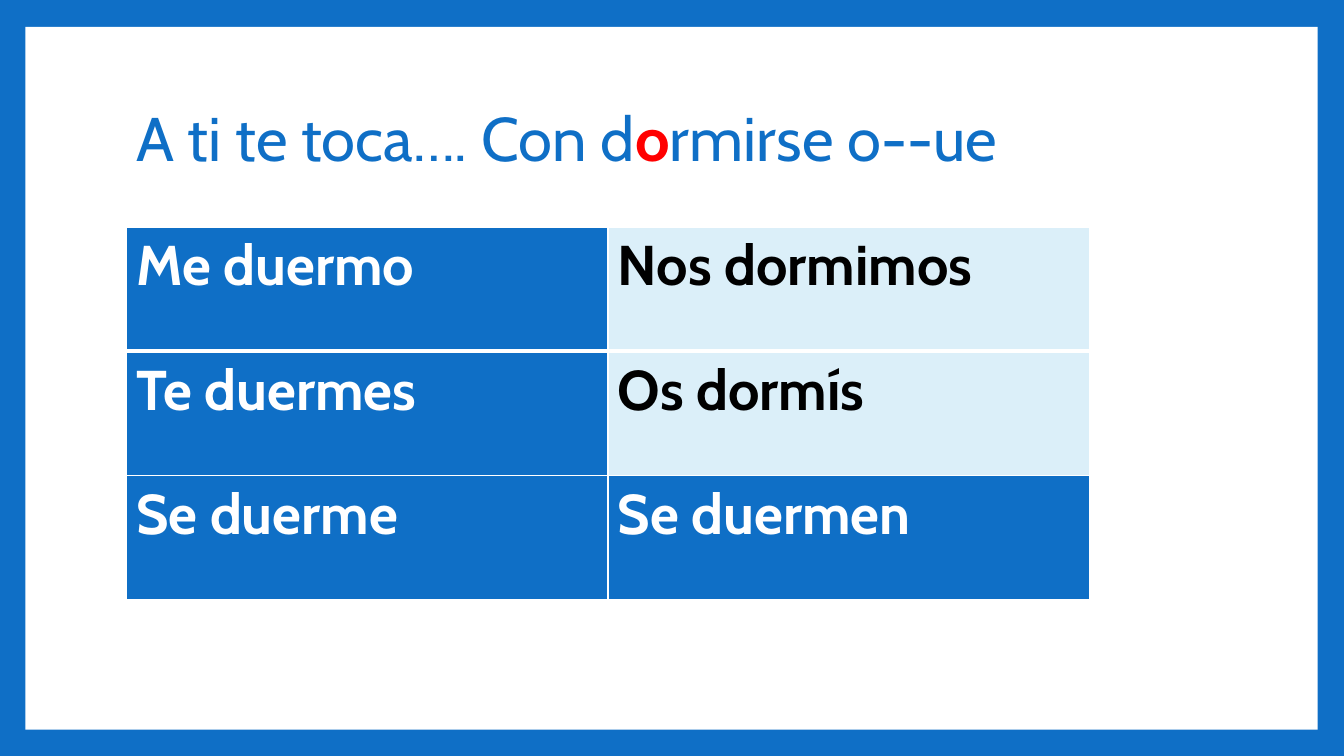
import lxml.etree
import pptx
import pptx.dml.color
import pptx.enum.shapes
import pptx.enum.text
import pptx.oxml.ns
import pptx.util

Cm = pptx.util.Cm
Pt = pptx.util.Pt
qn = pptx.oxml.ns.qn

COLORS = {
    "blue": "0F6FC6",
    "pale": "DBEFF9",
    "white": "FFFFFF",
    "black": "000000",
    "red": "FF0000",
}


def rgb(name):
    return pptx.dml.color.RGBColor.from_string(COLORS[name])


class SlideBuilder:
    font = "Cabin"
    title_size = 44
    cell_size = 40

    def __init__(self, prs):
        self.s = prs.slides.add_slide(prs.slide_layouts[6])

    def background(self, color):
        fill = self.s.background.fill
        fill.solid()
        fill.fore_color.rgb = rgb(color)

    def panel(self, left, top, width, height, color):
        sp = self.s.shapes.add_shape(
            pptx.enum.shapes.MSO_SHAPE.RECTANGLE,
            Cm(left), Cm(top), Cm(width), Cm(height))
        sp.shadow.inherit = False
        sp.fill.solid()
        sp.fill.fore_color.rgb = rgb(color)
        sp.line.fill.background()

    def run(self, p, text, size, color, bold):
        r = p.add_run()
        r.text = text
        r.font.name = self.font
        r.font.size = Pt(size)
        r.font.bold = bold
        r.font.color.rgb = rgb(color)

    def title(self, left, top, width, height, runs):
        sp = self.s.shapes.add_textbox(Cm(left), Cm(top), Cm(width), Cm(height))
        tf = sp.text_frame
        tf.word_wrap = True
        tf.vertical_anchor = pptx.enum.text.MSO_ANCHOR.MIDDLE
        p = tf.paragraphs[0]
        p.line_spacing = 0.9
        for text, color, bold in runs:
            self.run(p, text, self.title_size, color, bold)

    def border(self, cell, side, width):
        """Draw a white line on one side (L, R, T or B) of a cell."""
        tc_pr = cell._tc.get_or_add_tcPr()
        ln = lxml.etree.SubElement(tc_pr, qn(f"a:ln{side}"), w=str(Pt(width)))
        fill = lxml.etree.SubElement(ln, qn("a:solidFill"))
        lxml.etree.SubElement(fill, qn("a:srgbClr"), val=COLORS["white"])

    def table(self, left, top, width, height, rows):
        """Place rows of (text, fill, text colour), with a thick line under the first."""
        table = self.s.shapes.add_table(
            len(rows), len(rows[0]),
            Cm(left), Cm(top), Cm(width), Cm(height)).table
        for i, row in enumerate(rows):
            for j, (text, fill, color) in enumerate(row):
                cell = table.cell(i, j)
                widths = {"L": 1, "R": 1,
                          "T": 3 if i == 1 else 1,
                          "B": 3 if i == 0 else 1}
                for side, line_width in widths.items():
                    self.border(cell, side, line_width)
                cell.fill.solid()
                cell.fill.fore_color.rgb = rgb(fill)
                p = cell.text_frame.paragraphs[0]
                self.run(p, text, self.cell_size, color, True)


def main():
    prs = pptx.Presentation()
    prs.slide_width = Cm(33.87)
    prs.slide_height = Cm(19.05)

    slide = SlideBuilder(prs)
    slide.background("blue")
    slide.panel(0.64, 0.68, 32.57, 17.71, "white")
    slide.title(3.18, 1.7, 27.43, 3.76, [
        ("A ti te toca…. Con d", "blue", False),
        ("o", "red", True),
        ("rmirse o--ue", "blue", False),
    ])
    strong = ("blue", "white")
    light = ("pale", "black")
    slide.table(3.18, 5.72, 24.28, 9.39, [
        [("Me duermo", *strong), ("Nos dormimos", *light)],
        [("Te duermes", *strong), ("Os dormís", *light)],
        [("Se duerme", *strong), ("Se duermen", *strong)],
    ])
    prs.save("out.pptx")


if __name__ == "__main__":
    main()
